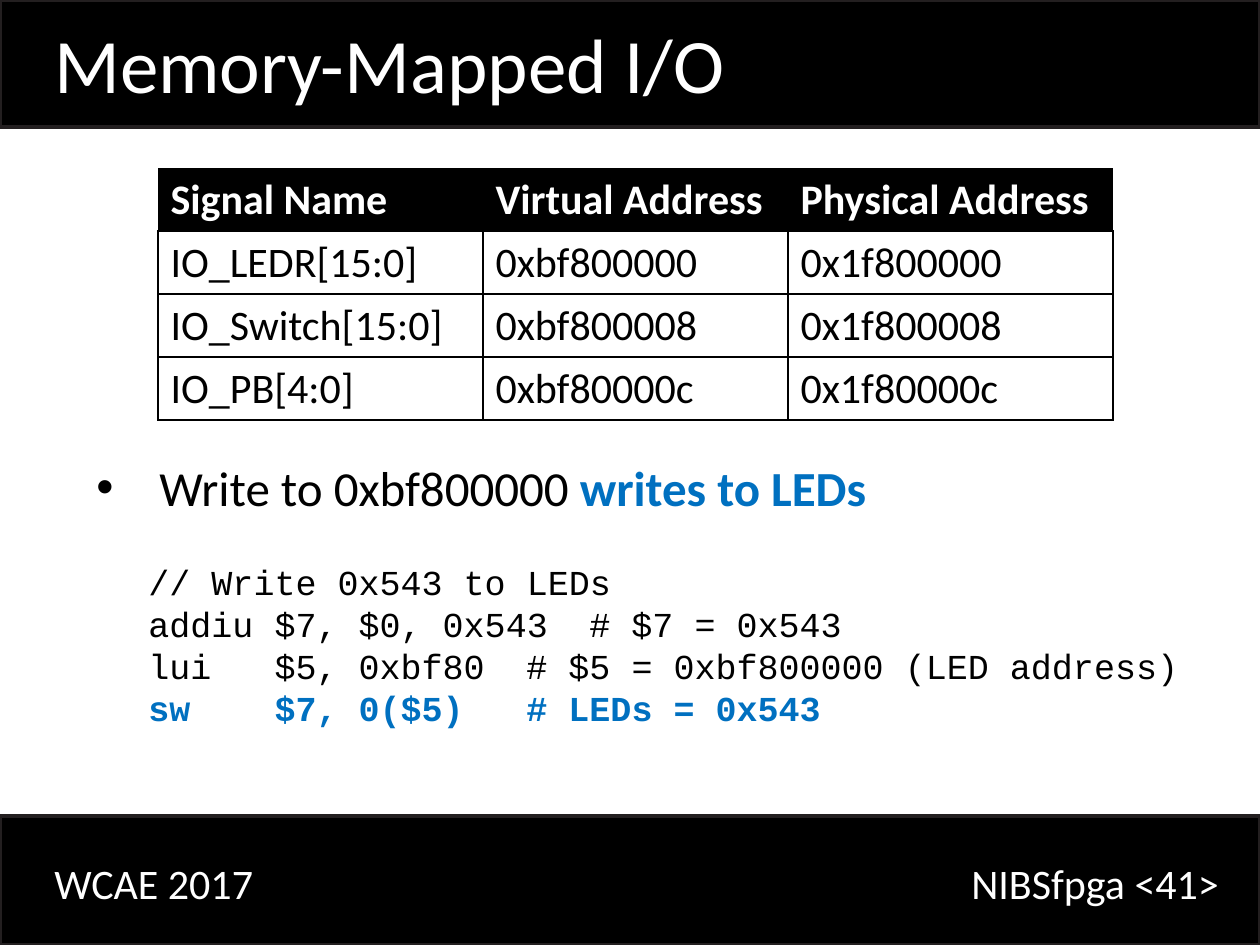
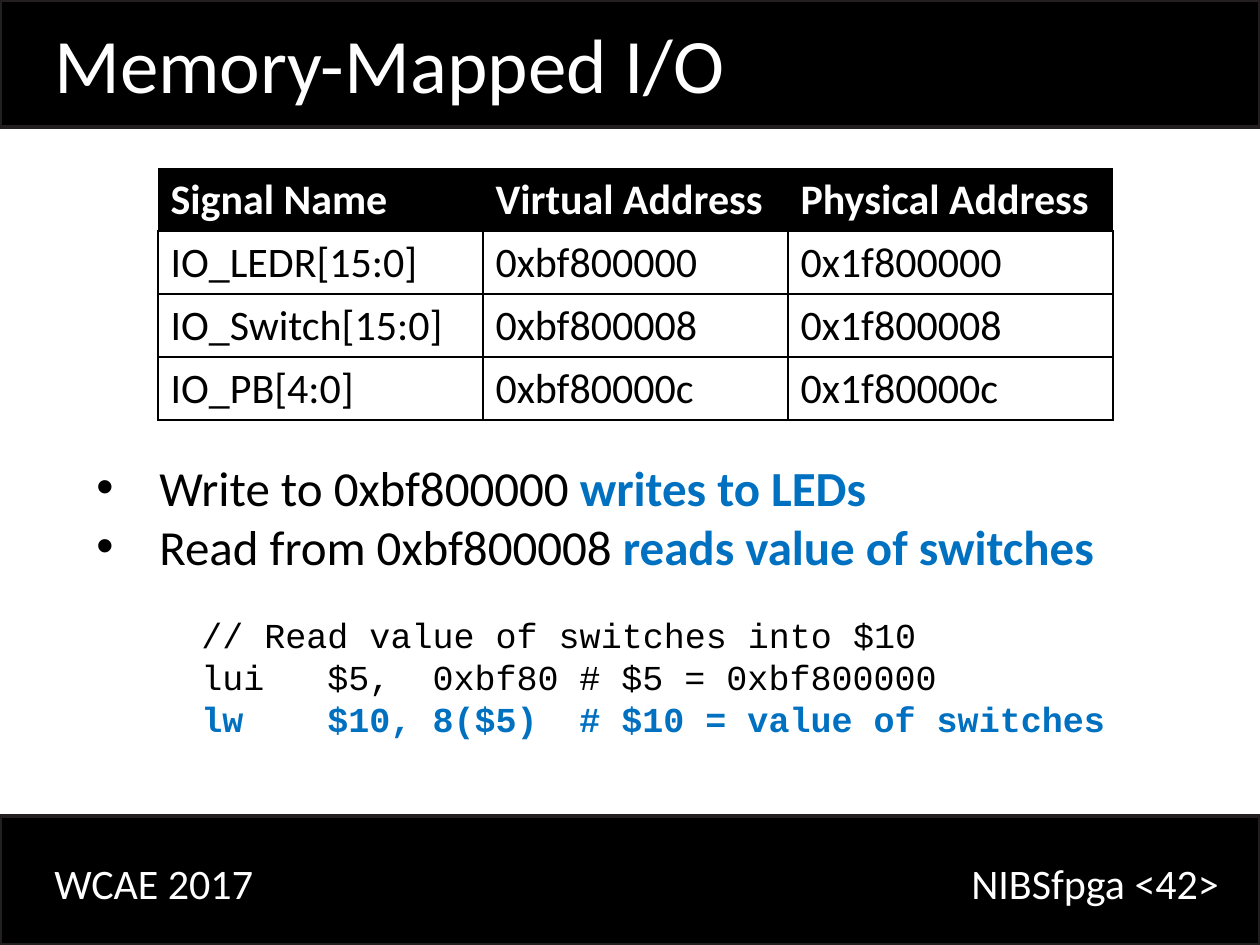
from lxml import etree
from pptx import Presentation
from pptx.dml.color import RGBColor
from pptx.enum.shapes import MSO_SHAPE
from pptx.oxml.ns import qn
from pptx.util import Emu, Pt

RECT = MSO_SHAPE.RECTANGLE
PLAIN = "{2D5ABB26-0587-4C30-8999-92F81FD0307C}"
HUES = {"black": "000000", "white": "FFFFFF", "edge": "231F20", "blue": "0070C0"}


def px(n):
    return Emu(round(n * 914400 / 126))


def write(frame, lines, size=24, font="Calibri", hue="black", bold=False,
          bullet=False, pitch=None):
    frame.word_wrap = True
    for i, line in enumerate(lines):
        para = frame.add_paragraph() if i else frame.paragraphs[0]
        if pitch:
            para.line_spacing = Pt(pitch)
        if bullet:
            props = para._p.get_or_add_pPr()
            props.set("marL", str(px(63)))
            props.set("indent", str(-px(63)))
            etree.SubElement(props, qn("a:buFont")).set("typeface", "Arial")
            etree.SubElement(props, qn("a:buChar")).set("char", "•")
        for text, hot in line:
            run = para.add_run()
            run.text = text
            run.font.size = Pt(size)
            run.font.name = font
            run.font.bold = bold or hot
            run.font.color.rgb = RGBColor.from_string(HUES["blue" if hot else hue])


title = "Memory-Mapped I/O"
bands = [(0, 127), (816, 129)]
rows = [
    ("Signal Name", "Virtual Address", "Physical Address"),
    ("IO_LEDR[15:0]", "0xbf800000", "0x1f800000"),
    ("IO_Switch[15:0]", "0xbf800008", "0x1f800008"),
    ("IO_PB[4:0]", "0xbf80000c", "0x1f80000c"),
]
widths = [325, 305, 325]
row_h = 63
points = [
    [("Write to 0xbf800000 ", False), ("writes to LEDs", True)],
    [("Read from 0xbf800008 ", False), ("reads value of switches", True)],
]
pages = [
    {
        "page": 41,
        "points": points[:1],
        "box": (136, 554, 1103, 224),
        "code": [
            "// Write 0x543 to LEDs",
            "addiu $7, $0, 0x543\t# $7 = 0x543",
            "lui   $5, 0xbf80\t# $5 = 0xbf800000 (LED address)",
            "sw    $7, 0($5)\t# LEDs = 0x543",
        ],
    },
    {
        "page": 42,
        "points": points,
        "box": (189, 607, 935, 183),
        "code": [
            "// Read value of switches into $10",
            "lui   $5,  0xbf80\t# $5 = 0xbf800000",
            "lw    $10, 8($5)\t# $10 = value of switches",
        ],
    },
]

deck = Presentation()
deck.slide_width, deck.slide_height = px(1260), px(945)

for page in pages:
    slide = deck.slides.add_slide(deck.slide_layouts[6])
    shapes = slide.shapes

    for top, high in bands:
        band = shapes.add_shape(RECT, 0, px(top), px(1260), px(high))
        band.shadow.inherit = False
        band.fill.solid()
        band.fill.fore_color.rgb = RGBColor.from_string(HUES["black"])
        band.line.color.rgb = RGBColor.from_string(HUES["edge"])
        band.line.width = Pt(2)

    labels = [
        (f"NIBSfpga <{page['page']}>", (959, 851, 300, 63), 24),
        ("WCAE 2017", (42, 851, 906, 63), 24),
        (title, (42, 10, 1187, 106), 44),
    ]
    for text, box, size in labels:
        label = shapes.add_textbox(*map(px, box))
        write(label.text_frame, [[(text, False)]], size=size, hue="white")

    grid = shapes.add_table(len(rows), len(widths), px(158), px(168),
                            px(sum(widths)), px(row_h * len(rows)))
    grid.element.find(".//" + qn("a:tableStyleId")).text = PLAIN
    table = grid.table
    for col, width in zip(table.columns, widths):
        col.width = px(width)
    for r, row in enumerate(rows):
        table.rows[r].height = px(row_h)
        head = r == 0
        for c, text in enumerate(row):
            cell = table.cell(r, c)
            write(cell.text_frame, [[(text, False)]],
                  hue="white" if head else "black", bold=head)
            cell.fill.solid()
            cell.fill.fore_color.rgb = RGBColor.from_string(
                HUES["black" if head else "white"])
            if head:
                continue
            props = cell._tc.get_or_add_tcPr()
            for i, side in enumerate("LRTB"):
                edge = etree.Element(qn(f"a:ln{side}"), w=str(Pt(1)))
                fill = etree.SubElement(edge, qn("a:solidFill"))
                etree.SubElement(fill, qn("a:srgbClr"), val=HUES["black"])
                props.insert(i, edge)

    items = page["points"]
    notes = shapes.add_textbox(px(84), px(451), px(1134), px(13 + 59 * len(items)))
    write(notes.text_frame, items, size=28, bullet=True)

    code = page["code"]
    lines = [[(text, text == code[-1])] for text in code]
    block = shapes.add_textbox(*map(px, page["box"]))
    write(block.text_frame, lines, size=20, font="Courier New", pitch=24)

deck.save("out.pptx")
